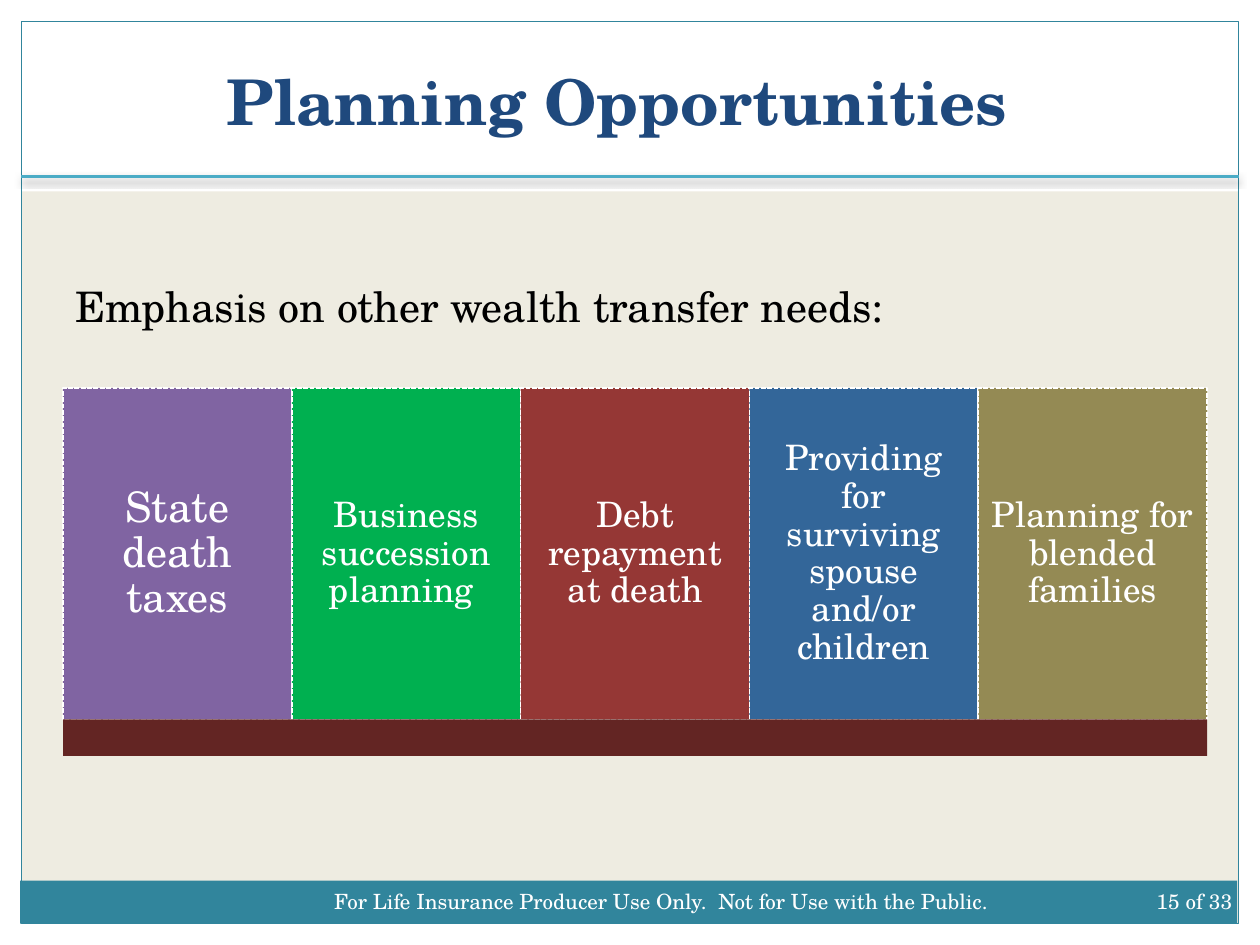
import dataclasses

import pptx
import pptx.dml.color
import pptx.enum.dml
import pptx.enum.shapes
import pptx.enum.text
import pptx.oxml
import pptx.oxml.ns
import pptx.util

Inches = pptx.util.Inches
ALIGN = pptx.enum.text.PP_ALIGN
ANCHOR = pptx.enum.text.MSO_ANCHOR


@dataclasses.dataclass(frozen=True)
class Theme:
    font: str = "TeX Gyre Schola"
    background: str = "EEECE1"
    white: str = "FFFFFF"
    black: str = "000000"
    teal: str = "31859C"
    rule: str = "4BACC6"
    title: str = "1F497D"
    base: str = "632523"
    title_size: int = 36
    lead_size: int = 24
    card_size: int = 20
    footer_size: int = 12


THEME = Theme()
WIDTH, HEIGHT = 10, 7.5
MARGIN = 0.17
FOOTER_TOP = 7
GRID_LEFT, GRID_WIDTH = 0.5, 9.08
LEAD_TOP, CARD_TOP, BASE_TOP, BASE_HEIGHT = 1.83, 3.08, 5.71, 0.29

CARDS = [
    ("State death taxes", "8064A2", THEME.lead_size),
    ("Business succession planning ", "00B050", THEME.card_size),
    ("Debt repayment at death", "953735", THEME.card_size),
    ("Providing for surviving spouse and/or children", "336699", THEME.card_size),
    ("Planning for blended families", "948A54", THEME.card_size),
]


def rgb(color):
    return pptx.dml.color.RGBColor.from_string(color)


def write_text(shape, text, size, color, align=ALIGN.LEFT, anchor=ANCHOR.TOP,
               bold=False, line_spacing=None, inset=None):
    frame = shape.text_frame
    frame.word_wrap = True
    frame.auto_size = pptx.enum.text.MSO_AUTO_SIZE.NONE
    frame.vertical_anchor = anchor
    if inset is not None:
        frame.margin_left = frame.margin_right = Inches(inset)
        frame.margin_top = frame.margin_bottom = Inches(inset)
    paragraph = frame.paragraphs[0]
    paragraph.alignment = align
    paragraph.line_spacing = line_spacing
    run = paragraph.add_run()
    run.text = text
    run.font.name = THEME.font
    run.font.size = pptx.util.Pt(size)
    run.font.bold = bold
    run.font.color.rgb = rgb(color)


def add_text(slide, box, text, size, color, **options):
    shape = slide.shapes.add_textbox(*map(Inches, box))
    write_text(shape, text, size, color, **options)


def add_rectangle(slide, box, fill=None, line=None, line_width=0.75):
    shape = slide.shapes.add_shape(
        pptx.enum.shapes.MSO_SHAPE.RECTANGLE, *map(Inches, box))
    shape.shadow.inherit = False
    if fill:
        shape.fill.solid()
        shape.fill.fore_color.rgb = rgb(fill)
    else:
        shape.fill.background()
    if line:
        shape.line.color.rgb = rgb(line)
        shape.line.width = pptx.util.Pt(line_width)
    else:
        shape.line.fill.background()
    return shape


def add_shadowed_rule(slide, top):
    connector = slide.shapes.add_connector(
        pptx.enum.shapes.MSO_CONNECTOR.STRAIGHT,
        Inches(MARGIN), Inches(top), Inches(WIDTH - MARGIN), Inches(top))
    connector.line.color.rgb = rgb(THEME.rule)
    connector.line.width = pptx.util.Pt(1.57)
    connector._element.spPr.append(pptx.oxml.parse_xml(
        f'<a:effectLst {pptx.oxml.ns.nsdecls("a")}>'
        f'<a:outerShdw blurRad="{pptx.util.Pt(4)}" dist="{pptx.util.Pt(2)}" '
        'dir="5400000" rotWithShape="0">'
        f'<a:srgbClr val="{THEME.black}"><a:alpha val="45000"/></a:srgbClr>'
        '</a:outerShdw></a:effectLst>'))


def add_frame(slide):
    """Draw the white margins, header band, footer bar and border."""
    for box in (
        (0, HEIGHT - MARGIN, WIDTH, MARGIN),
        (0, 0, WIDTH, 1.52),
        (0, 0, MARGIN, HEIGHT),
        (WIDTH - MARGIN, 0, MARGIN, HEIGHT),
    ):
        add_rectangle(slide, box, fill=THEME.white)
    inner_width = WIDTH - 2 * MARGIN
    add_rectangle(slide, (0.16, 6.99, inner_width, 0.34), fill=THEME.teal)
    add_rectangle(slide, (MARGIN, MARGIN, inner_width, HEIGHT - 2 * MARGIN),
                  line=THEME.teal)
    add_shadowed_rule(slide, 1.4)


def add_footer(slide):
    add_text(slide, (9.08, FOOTER_TOP, 0.92, 0.3), "15 of 33",
             THEME.footer_size, THEME.white)
    add_text(slide, (WIDTH / 4, FOOTER_TOP, 5.5, 0.3),
             "For Life Insurance Producer Use Only.  Not for Use with the Public.",
             THEME.footer_size, THEME.white, align=ALIGN.CENTER)


def add_cards(slide):
    card_width = GRID_WIDTH / len(CARDS)
    for column, (text, fill, size) in enumerate(CARDS):
        box = (GRID_LEFT + column * card_width, CARD_TOP,
               card_width, BASE_TOP - CARD_TOP)
        card = add_rectangle(slide, box, fill, THEME.white, 0.9)
        card.line.dash_style = pptx.enum.dml.MSO_LINE.SQUARE_DOT
        write_text(card, text, size, THEME.white, align=ALIGN.CENTER,
                   anchor=ANCHOR.MIDDLE, line_spacing=0.9, inset=size / 240)
    add_rectangle(slide, (GRID_LEFT, BASE_TOP, GRID_WIDTH, BASE_HEIGHT), THEME.base)


def set_title(slide, text):
    """Fill the title placeholder and bring it in front of the header band."""
    title = slide.shapes.title
    title.left, title.top, title.width, title.height = map(
        Inches, (0.42, 0, 8.95, 1.15))
    write_text(title, text, THEME.title_size, THEME.title, align=ALIGN.CENTER,
               anchor=ANCHOR.BOTTOM, bold=True)
    slide.shapes._spTree.append(title._element)


def main():
    presentation = pptx.Presentation()
    presentation.slide_width = Inches(WIDTH)
    presentation.slide_height = Inches(HEIGHT)
    slide = presentation.slides.add_slide(presentation.slide_layouts[5])
    slide.background.fill.solid()
    slide.background.fill.fore_color.rgb = rgb(THEME.background)
    add_frame(slide)
    add_footer(slide)
    add_text(slide, (GRID_LEFT, LEAD_TOP, GRID_WIDTH, CARD_TOP - LEAD_TOP),
             "Emphasis on other wealth transfer needs:",
             THEME.lead_size, THEME.black, anchor=ANCHOR.MIDDLE,
             line_spacing=0.9, inset=0.1)
    add_cards(slide)
    set_title(slide, "Planning Opportunities")
    presentation.save("out.pptx")


if __name__ == "__main__":
    main()
